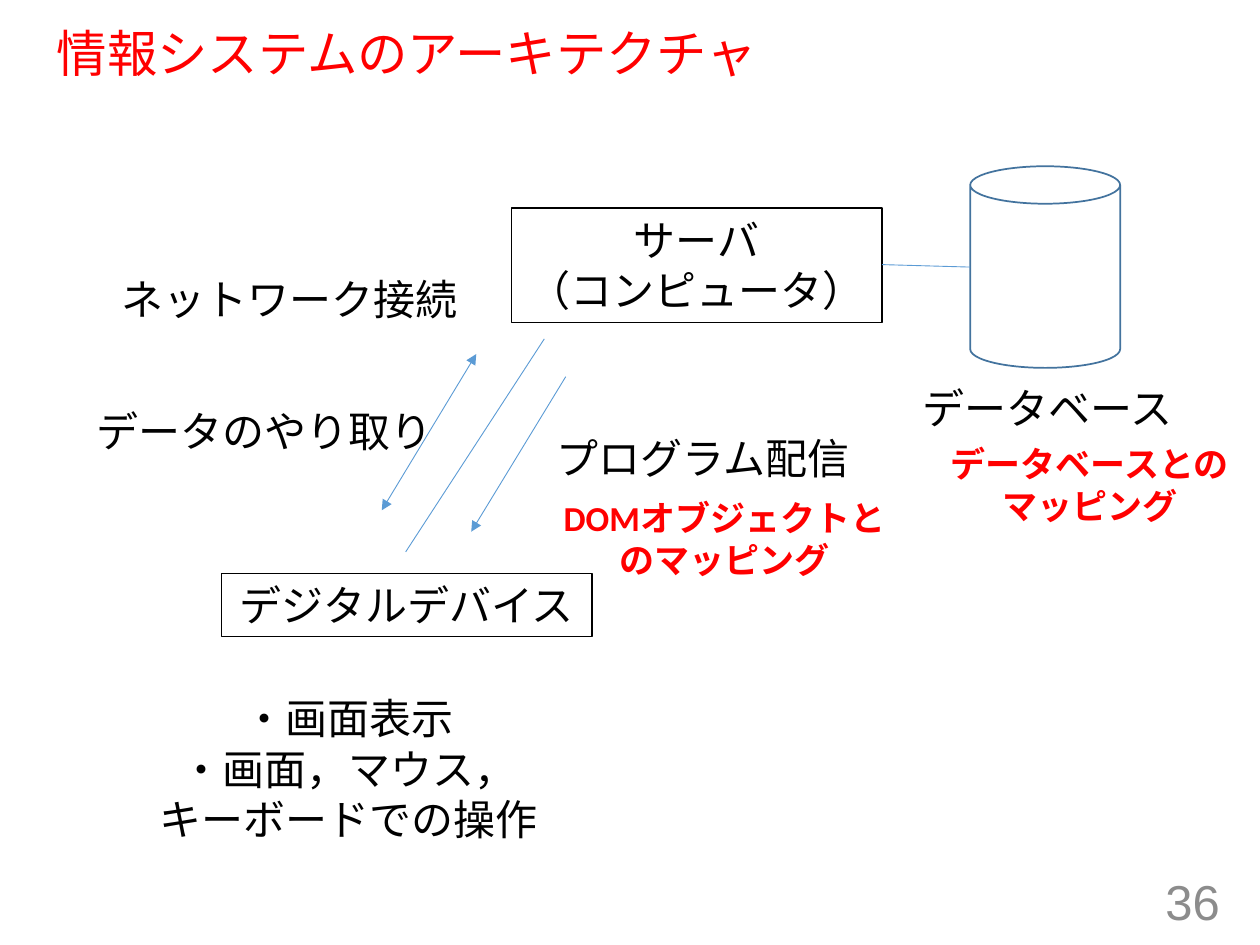
"""Build a slide showing the architecture of an information system."""
from dataclasses import dataclass

from lxml import etree
from pptx import Presentation
from pptx.dml.color import RGBColor
from pptx.enum.shapes import MSO_CONNECTOR, MSO_SHAPE
from pptx.enum.text import MSO_ANCHOR, MSO_AUTO_SIZE, PP_ALIGN
from pptx.oxml.ns import qn
from pptx.util import Inches, Pt

STRAIGHT = MSO_CONNECTOR.STRAIGHT
RECTANGLE, CAN = MSO_SHAPE.RECTANGLE, MSO_SHAPE.CAN
TOP, MIDDLE = MSO_ANCHOR.TOP, MSO_ANCHOR.MIDDLE
LEFT, CENTER, RIGHT = PP_ALIGN.LEFT, PP_ALIGN.CENTER, PP_ALIGN.RIGHT
FIXED_SIZE = MSO_AUTO_SIZE.NONE


@dataclass(frozen=True)
class Theme:
    ink: RGBColor = RGBColor(0, 0, 0)
    accent: RGBColor = RGBColor(255, 0, 0)
    number: RGBColor = RGBColor(0x8C, 0x8C, 0x8C)
    link: RGBColor = RGBColor(0x5B, 0x9B, 0xD5)
    can: RGBColor = RGBColor(0x43, 0x73, 0x9E)
    title_size: float = 28.8
    number_size: float = 28
    label_size: float = 24
    note_size: float = 20
    title_font: str = "Arial"
    body_font: str = "Calibri"


theme = Theme()


def write(box, text, size=theme.label_size, color=theme.ink, font=theme.body_font,
          bold=False, align=CENTER, anchor=TOP, spacing=None):
    frame = box.text_frame
    frame.word_wrap = True
    frame.auto_size = FIXED_SIZE
    frame.vertical_anchor = anchor
    frame.text = text
    for para in frame.paragraphs:
        para.alignment = align
        para.line_spacing = spacing
        for span in para.runs:
            span.font.size = Pt(size)
            span.font.name = font
            span.font.bold = bold
            span.font.color.rgb = color


deck = Presentation()
deck.slide_width, deck.slide_height = Inches(10), Inches(7.5)
page = deck.slides.add_slide(deck.slide_layouts[5])
shapes = page.shapes

title = shapes.title
title.left, title.top = Inches(0.35), Inches(0.19)
title.width, title.height = Inches(9.25), Inches(0.51)
write(title, "情報システムのアーキテクチャ", size=theme.title_size, color=theme.accent,
      font=theme.title_font, align=LEFT, anchor=MIDDLE, spacing=0.9)

number = shapes.add_textbox(Inches(7.53), Inches(6.95), Inches(2.25), Inches(0.4))
write(number, "36", size=theme.number_size, color=theme.number,
      font=theme.title_font, align=RIGHT, anchor=MIDDLE)

label_width = 2.94
nodes = [
    ("サーバ\n（コンピュータ）", 4.06, 1.65, 0.91),
    ("デジタルデバイス", 1.76, 4.55, 0.5),
]
for text, left, top, height in nodes:
    node = shapes.add_shape(RECTANGLE, Inches(left), Inches(top),
                            Inches(label_width), Inches(height))
    node.shadow.inherit = False
    node.fill.background()
    node.line.color.rgb = theme.ink
    node.line.width = Pt(0.75)
    write(node, text)

database = shapes.add_shape(CAN, Inches(7.7), Inches(1.32), Inches(1.19), Inches(1.6))
database.shadow.inherit = False
database.fill.background()
database.line.color.rgb = theme.can
database.line.width = Pt(1)

links = [
    (4.32, 2.69, 3.22, 4.38, []),
    (4.49, 2.99, 3.74, 4.22, ["a:tailEnd"]),
    (3.78, 2.81, 3.03, 4.05, ["a:headEnd", "a:tailEnd"]),
    (7, 2.1, 7.7, 2.12, []),
]
for start_x, start_y, end_x, end_y, arrowheads in links:
    link = shapes.add_connector(STRAIGHT, Inches(start_x), Inches(start_y),
                                Inches(end_x), Inches(end_y))
    link.line.color.rgb = theme.link
    link.line.width = Pt(0.5)
    outline = link.line._get_or_add_ln()
    for arrowhead in arrowheads:
        etree.SubElement(outline, qn(arrowhead), type="triangle")
    etree.SubElement(link._element.spPr, qn("a:effectLst"))

note = {"size": theme.note_size, "color": theme.accent, "bold": True}
labels = [
    ("ネットワーク接続", 0.83, 2.12, label_width, 0.5, {}),
    ("データのやり取り", 0.63, 3.17, label_width, 0.5, {}),
    ("プログラム配信", 4.11, 3.38, label_width, 0.5, {}),
    ("データベース", 6.84, 2.99, label_width, 0.5, {}),
    ("・画面表示\n・画面，マウス，キーボードでの操作", 1.01, 5.45, 3.51, 1.31, {}),
    ("データベースとのマッピング", 7.18, 3.46, label_width, 0.77, note),
    ("DOMオブジェクトとのマッピング", 4.28, 3.89, label_width, 0.77, note),
]
for text, left, top, width, height, style in labels:
    label = shapes.add_textbox(Inches(left), Inches(top), Inches(width), Inches(height))
    write(label, text, **style)

deck.save("out.pptx")
